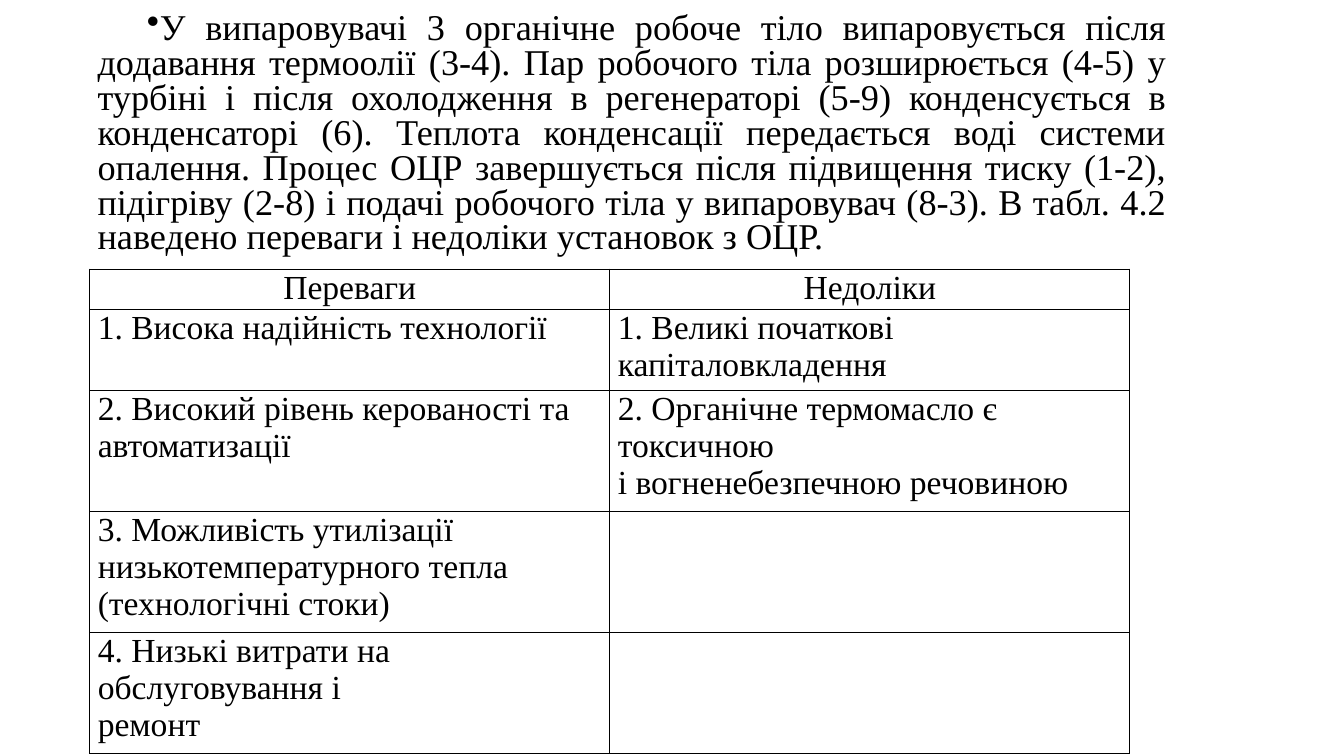
from lxml.etree import SubElement
from pptx import Presentation
from pptx.dml.color import RGBColor
from pptx.enum.text import MSO_ANCHOR, PP_ALIGN as Align
from pptx.oxml.ns import qn
from pptx.util import Pt

EXPLANATION = (
    "У випаровувачі 3 органічне робоче тіло випаровується після додавання "
    "термоолії (3-4). Пар робочого тіла розширюється (4-5) у турбіні і після "
    "охолодження в регенераторі (5-9) конденсується в конденсаторі (6). "
    "Теплота конденсації передається воді системи опалення. Процес ОЦР "
    "завершується після підвищення тиску (1-2), підігріву (2-8) і подачі "
    "робочого тіла у випаровувач (8-3). В табл. 4.2 наведено переваги і "
    "недоліки установок з ОЦР."
)
# Each line break inside an entry starts a new paragraph.
COMPARISON = [
    ("Переваги", "Недоліки"),
    ("1. Висока надійність технології",
     "1. Великі початкові\nкапіталовкладення"),
    ("2. Високий рівень керованості та\nавтоматизації",
     "2. Органічне термомасло є токсичною\nі вогненебезпечною речовиною"),
    ("3. Можливість утилізації низькотемпературного тепла\n"
     "(технологічні стоки)", ""),
    ("4. Низькі витрати на обслуговування і\nремонт", ""),
]
ROW_HEIGHTS = [26.64, 54.72, 79.92, 82.8, 79.92]
COLUMN_WIDTH = 371.5


def color(hex_code):
    return RGBColor.from_string(hex_code)


def apply(target, values):
    for name, value in values.items():
        setattr(target, name, value)


class SlideBuilder:
    font_name = "Times New Roman"
    ink = "000000"

    def __init__(self, slide):
        self.slide = slide

    def style(self, paragraph, size, **layout):
        apply(paragraph, layout)
        for run in paragraph.runs:
            apply(run.font, {"name": self.font_name, "size": Pt(size)})
            run.font.color.rgb = color(self.ink)

    def bullet_text(self, text, left, top, width, height, size):
        frame = self.slide.shapes.add_textbox(
            Pt(left), Pt(top), Pt(width), Pt(height)).text_frame
        frame.word_wrap = True
        paragraph = frame.paragraphs[0]
        paragraph.text = text
        self.style(paragraph, size, alignment=Align.JUSTIFY, line_spacing=0.8)
        properties = paragraph._p.get_or_add_pPr()
        for name, points in {"marL": 36.72, "marR": 13.5, "indent": 35.28}.items():
            properties.set(name, str(Pt(points)))
        bullet = SubElement(properties, qn("a:buChar"))
        bullet.set("char", "•")

    def border(self, cell, width=1):
        properties = cell._tc.get_or_add_tcPr()
        for position, side in enumerate(("lnL", "lnR", "lnT", "lnB")):
            line = properties.makeelement(qn(f"a:{side}"), {"w": str(Pt(width))})
            fill = SubElement(line, qn("a:solidFill"))
            SubElement(fill, qn("a:srgbClr")).set("val", self.ink)
            properties.insert(position, line)

    def table(self, rows, left, top, column_width, row_heights, size):
        columns = len(rows[0])
        table = self.slide.shapes.add_table(
            len(rows), columns, Pt(left), Pt(top),
            Pt(column_width * columns), Pt(sum(row_heights))).table
        apply(table, {"first_row": False, "horz_banding": False})
        for column in table.columns:
            column.width = Pt(column_width)
        for r, (entries, height) in enumerate(zip(rows, row_heights)):
            table.rows[r].height = Pt(height)
            for c, entry in enumerate(entries):
                self.cell(table.cell(r, c), entry, size, is_header=r == 0)

    def cell(self, cell, entry, size, is_header):
        cell.text = entry
        apply(cell, {"margin_left": Pt(0 if is_header else 5.76),
                     "margin_right": 0, "margin_top": 0, "margin_bottom": 0,
                     "vertical_anchor": MSO_ANCHOR.TOP})
        cell.fill.background()
        self.border(cell)
        for paragraph in cell.text_frame.paragraphs:
            self.style(paragraph, size,
                       alignment=Align.CENTER if is_header else Align.LEFT)


def main():
    deck = Presentation()
    apply(deck, {"slide_width": Pt(960), "slide_height": Pt(540)})
    blank_layout = deck.slide_layouts[6]
    builder = SlideBuilder(deck.slides.add_slide(blank_layout))
    builder.bullet_text(EXPLANATION, 25.92, 5.76, 828, 226.8, size=25.9)
    builder.table(COMPARISON, 64.08, 192.4, COLUMN_WIDTH, ROW_HEIGHTS, size=24)
    deck.save("out.pptx")


if __name__ == "__main__":
    main()
